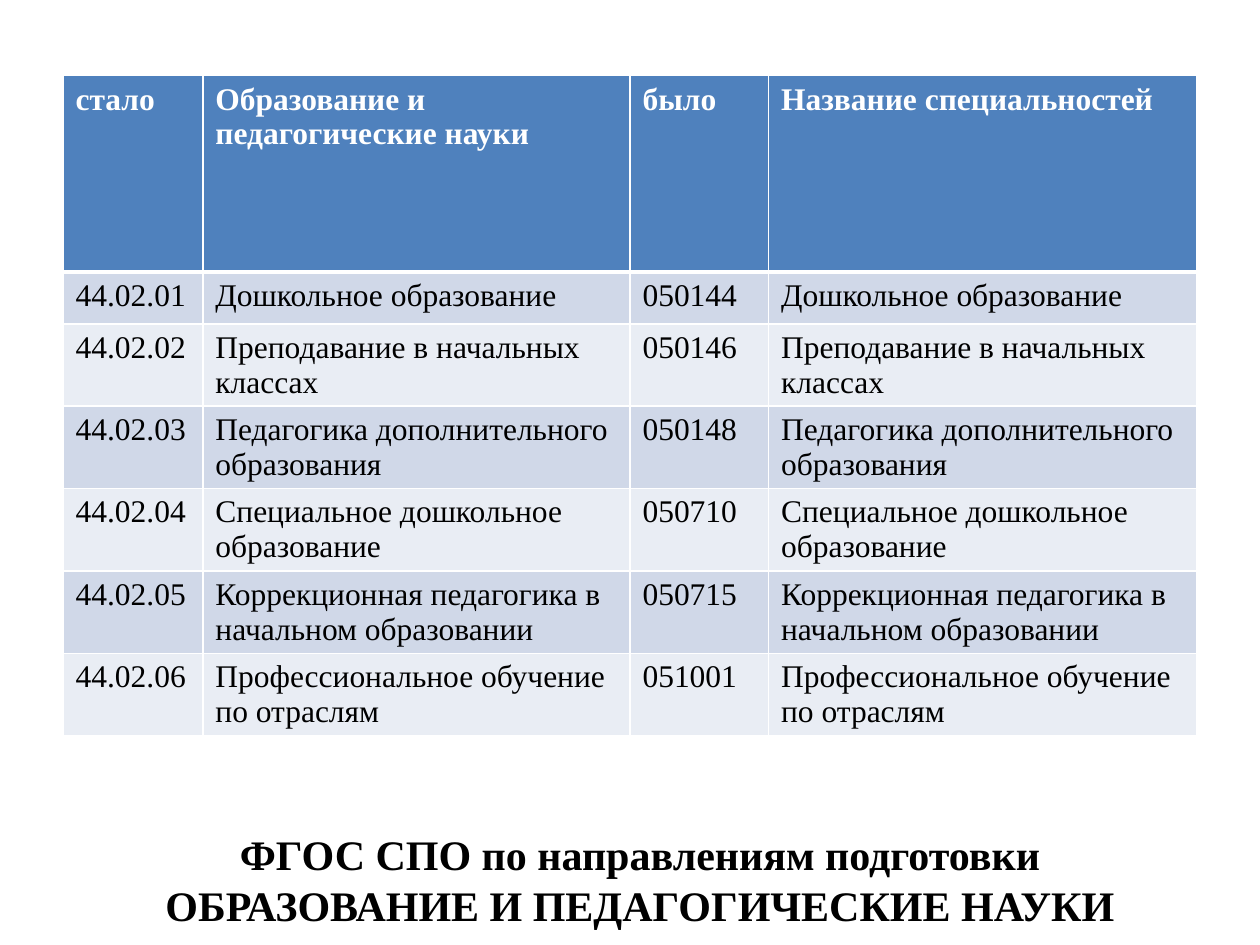
from typing import NamedTuple

from lxml import etree
from pptx import Presentation
from pptx.dml.color import RGBColor
from pptx.enum.text import MSO_AUTO_SIZE, PP_ALIGN
from pptx.oxml.ns import qn
from pptx.util import Inches, Pt

CENTER = PP_ALIGN.CENTER
FIT_SHAPE = MSO_AUTO_SIZE.SHAPE_TO_FIT_TEXT
FONT = "Times New Roman"
WHITE, BLACK = "FFFFFF", "000000"
HEADER_FILL = "4F81BD"
BAND_FILLS = ("D0D8E8", "E9EDF4")
COLUMN_WIDTHS = (1.11, 3.39, 1.1, 3.4)
HEADER_HEIGHT, ROW_HEIGHT = 1.56, 0.41
THIN, THICK = 1, 3


class Specialty(NamedTuple):
    new_code: str
    old_code: str
    title: str


HEADINGS = ("стало", "Образование и педагогические науки",
            "было", "Название специальностей")
SPECIALTIES = (
    Specialty("44.02.01", "050144", "Дошкольное образование"),
    Specialty("44.02.02", "050146", "Преподавание в начальных классах"),
    Specialty("44.02.03", "050148", "Педагогика дополнительного образования"),
    Specialty("44.02.04", "050710", "Специальное дошкольное образование"),
    Specialty("44.02.05", "050715", "Коррекционная педагогика в начальном образовании"),
    Specialty("44.02.06", "051001", "Профессиональное обучение по отраслям"),
)
CAPTION = ("ФГОС СПО по направлениям подготовки",
           "ОБРАЗОВАНИЕ И ПЕДАГОГИЧЕСКИЕ НАУКИ")


def rgb(value: str) -> RGBColor:
    return RGBColor.from_string(value)


def write(paragraph, text: str, size: int, color: str, bold: bool) -> None:
    run = paragraph.add_run()
    run.text = text
    font_format = {"name": FONT, "size": Pt(size), "bold": bold}
    for attribute, value in font_format.items():
        setattr(run.font, attribute, value)
    run.font.color.rgb = rgb(color)


def add_borders(cell, top: int, bottom: int) -> None:
    """Draw white cell borders; top and bottom are widths in points."""
    properties = cell._tc.get_or_add_tcPr()
    widths = {"a:lnL": THIN, "a:lnR": THIN, "a:lnT": top, "a:lnB": bottom}
    for tag, width in widths.items():
        line = etree.SubElement(properties, qn(tag), w=str(Pt(width)))
        fill = etree.SubElement(line, qn("a:solidFill"))
        etree.SubElement(fill, qn("a:srgbClr"), val=WHITE)


def fill_row(table, row: int, texts: tuple[str, ...]) -> None:
    is_header = row == 0
    background = HEADER_FILL if is_header else BAND_FILLS[(row - 1) % 2]
    for column, text in enumerate(texts):
        cell = table.cell(row, column)
        add_borders(cell, top=THICK if row == 1 else THIN,
                    bottom=THICK if is_header else THIN)
        cell.fill.solid()
        cell.fill.fore_color.rgb = rgb(background)
        write(cell.text_frame.paragraphs[0], text, 18,
              WHITE if is_header else BLACK, is_header)


def add_specialties(slide) -> None:
    rows = [HEADINGS] + [(s.new_code, s.title, s.old_code, s.title) for s in SPECIALTIES]
    height = HEADER_HEIGHT + ROW_HEIGHT * len(SPECIALTIES)
    table = slide.shapes.add_table(
        len(rows), len(COLUMN_WIDTHS), Inches(0.5), Inches(0.6),
        Inches(sum(COLUMN_WIDTHS)), Inches(height)).table
    for column, width in zip(table.columns, COLUMN_WIDTHS):
        column.width = Inches(width)
    for row, texts in enumerate(rows):
        table.rows[row].height = Inches(ROW_HEIGHT if row else HEADER_HEIGHT)
        fill_row(table, row, texts)


def add_caption(slide) -> None:
    frame = slide.shapes.add_textbox(
        Inches(0.75), Inches(6.52), Inches(8.66), Inches(0.91)).text_frame
    frame.word_wrap = True
    frame.auto_size = FIT_SHAPE
    for index, text in enumerate(CAPTION):
        paragraph = frame.add_paragraph() if index else frame.paragraphs[0]
        paragraph.alignment = CENTER
        paragraph.line_spacing = Pt(29.3)
        write(paragraph, text, 24, BLACK, True)


def main() -> None:
    presentation = Presentation()
    presentation.slide_width = Inches(10)
    presentation.slide_height = Inches(7.5)
    slide = presentation.slides.add_slide(presentation.slide_layouts[6])
    add_specialties(slide)
    add_caption(slide)
    presentation.save("out.pptx")


if __name__ == "__main__":
    main()
